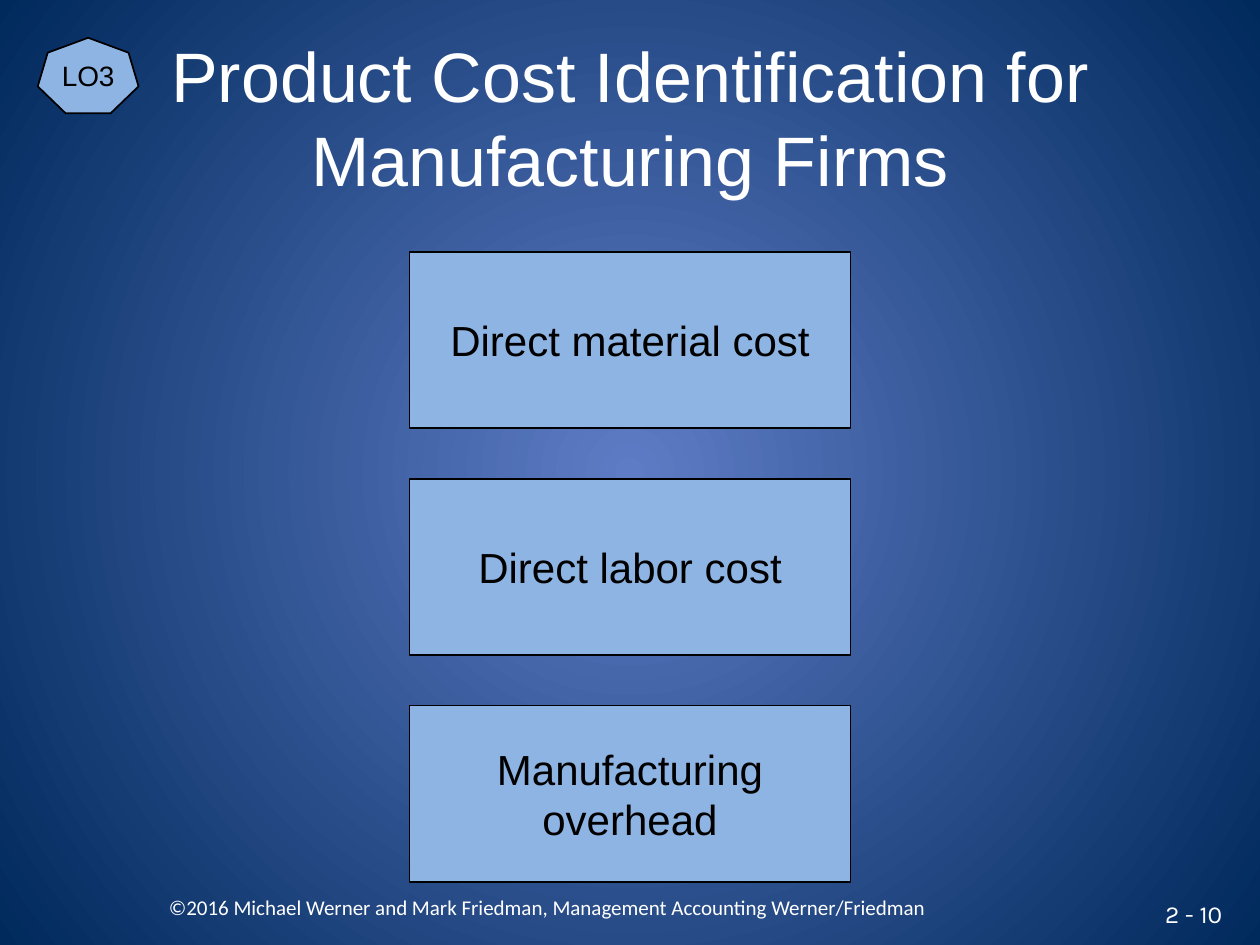
from dataclasses import dataclass

from lxml.etree import SubElement
from pptx import Presentation
from pptx.dml.color import RGBColor
from pptx.enum.shapes import MSO_SHAPE
from pptx.enum.text import MSO_ANCHOR, MSO_AUTO_SIZE, PP_ALIGN
from pptx.oxml.ns import qn
from pptx.slide import Slide
from pptx.text.text import TextFrame
from pptx.util import Emu, Pt

EMU_PER_PX = 9144


@dataclass(frozen=True)
class Theme:
    glow: RGBColor = RGBColor(0x5E, 0x7C, 0xC5)
    navy: RGBColor = RGBColor(0x00, 0x29, 0x5C)
    panel: RGBColor = RGBColor(0x8E, 0xB4, 0xE3)
    black: RGBColor = RGBColor(0, 0, 0)
    white: RGBColor = RGBColor(255, 255, 255)
    title_size: int = 40
    cost_size: int = 24
    badge_size: int = 16
    number_size: int = 14
    credit_size: int = 12


@dataclass(frozen=True)
class Box:
    left: int
    top: int
    width: int
    height: int

    def emu(self) -> tuple[Emu, ...]:
        sides = (self.left, self.top, self.width, self.height)
        return tuple(px(side) for side in sides)


@dataclass(frozen=True)
class TextStyle:
    size: int
    color: RGBColor
    font: str = "Arial"
    alignment: PP_ALIGN = PP_ALIGN.CENTER
    wrap: bool = True


THEME = Theme()
COSTS = ("Direct material cost", "Direct labor cost", "Manufacturing\noverhead")
FIRST_COST = Box(325, 200, 350, 140)
COST_PITCH = 180


def px(length: int) -> Emu:
    return Emu(length * EMU_PER_PX)


def write_text(text_frame: TextFrame, text: str, style: TextStyle) -> None:
    text_frame.text = text
    text_frame.auto_size = MSO_AUTO_SIZE.NONE
    text_frame.word_wrap = style.wrap
    text_frame.vertical_anchor = MSO_ANCHOR.MIDDLE
    for paragraph in text_frame.paragraphs:
        paragraph.alignment = style.alignment
        for run in paragraph.runs:
            run.font.name = style.font
            run.font.size = Pt(style.size)
            run.font.color.rgb = style.color


def paint_background(slide: Slide) -> None:
    fill = slide.background.fill
    fill.gradient()
    for stop, color in zip(fill.gradient_stops, (THEME.glow, THEME.navy)):
        stop.color.rgb = color
    gradient = slide.element.find(".//" + qn("a:gradFill"))
    gradient.remove(gradient.find(qn("a:lin")))
    circle = SubElement(gradient, qn("a:path"), {"path": "circle"})
    center = {side: "50000" for side in "ltrb"}
    SubElement(circle, qn("a:fillToRect"), center)


def add_title(slide: Slide, box: Box, text: str) -> None:
    title = slide.shapes.title
    title.left, title.top, title.width, title.height = box.emu()
    write_text(title.text_frame, text, TextStyle(THEME.title_size, THEME.white))


def add_panel(slide: Slide, kind: MSO_SHAPE, box: Box, text: str, size: int) -> None:
    shape = slide.shapes.add_shape(kind, *box.emu())
    shape.shadow.inherit = False
    shape.fill.solid()
    shape.fill.fore_color.rgb = THEME.panel
    shape.line.color.rgb = THEME.black
    shape.line.width = Pt(1)
    write_text(shape.text_frame, text, TextStyle(size, THEME.black, wrap=False))


def add_label(slide: Slide, box: Box, text: str, style: TextStyle) -> None:
    label = slide.shapes.add_textbox(*box.emu())
    write_text(label.text_frame, text, style)


def main() -> None:
    presentation = Presentation()
    presentation.slide_width = px(1000)
    presentation.slide_height = px(750)
    slide = presentation.slides.add_slide(presentation.slide_layouts[5])
    paint_background(slide)
    add_title(slide, Box(50, 30, 900, 125),
              "Product Cost Identification for Manufacturing Firms")
    for index, cost in enumerate(COSTS):
        box = Box(FIRST_COST.left, FIRST_COST.top + index * COST_PITCH,
                  FIRST_COST.width, FIRST_COST.height)
        add_panel(slide, MSO_SHAPE.RECTANGLE, box, cost, THEME.cost_size)
    add_panel(slide, MSO_SHAPE.HEPTAGON, Box(30, 30, 80, 60), "LO3", THEME.badge_size)
    add_label(slide, Box(43, 700, 783, 40),
              "©2016 Michael Werner and Mark Friedman, "
              "Management Accounting Werner/Friedman",
              TextStyle(THEME.credit_size, THEME.white, "Calibri"))
    add_label(slide, Box(900, 710, 80, 30), "2 - 10",
              TextStyle(THEME.number_size, THEME.white, "Karla", PP_ALIGN.RIGHT, False))
    presentation.save("out.pptx")


if __name__ == "__main__":
    main()
